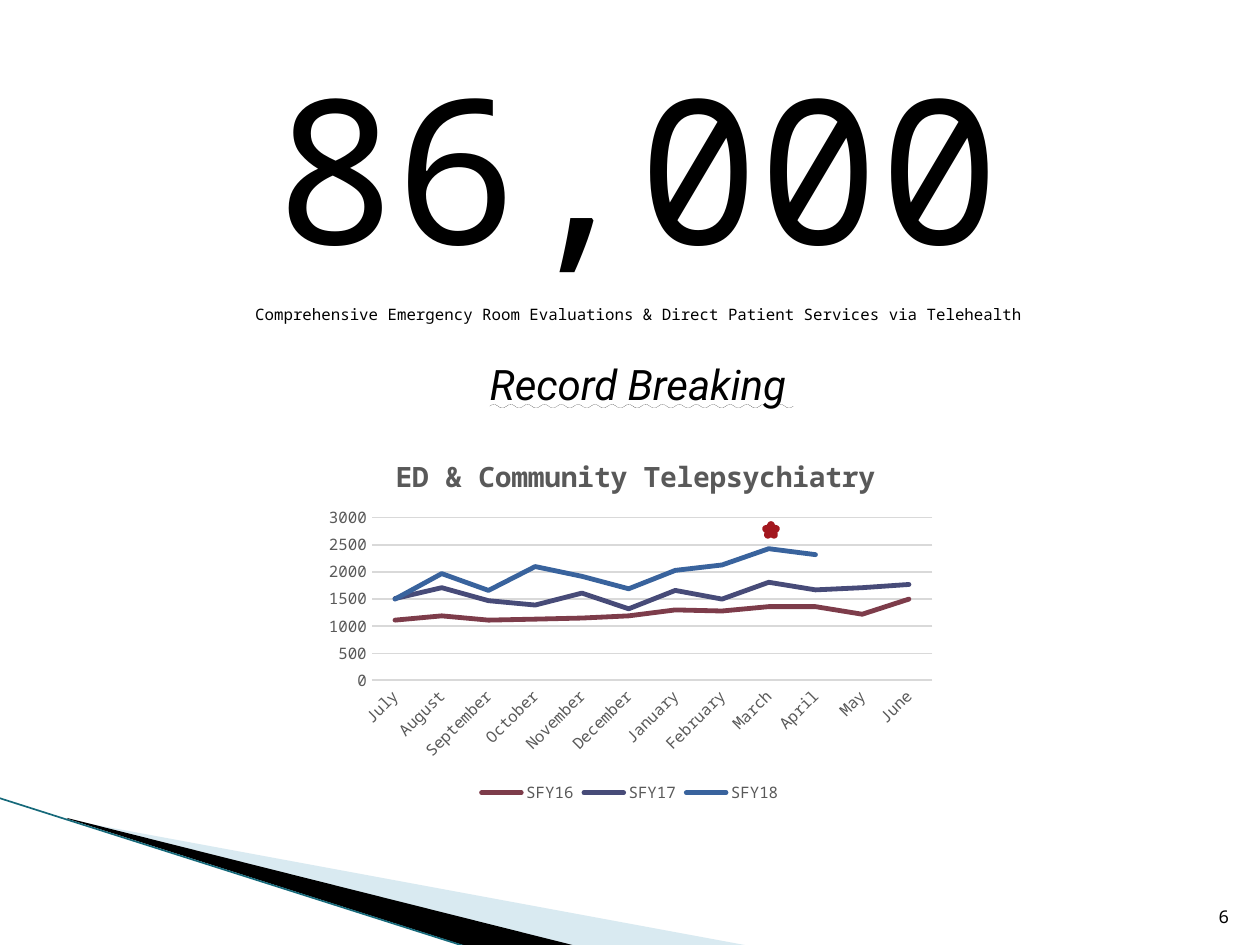
from dataclasses import dataclass

from lxml import etree
from pptx import Presentation
from pptx import util as u
from pptx.chart.data import CategoryChartData
from pptx.dml.color import RGBColor
from pptx.enum import chart as charts, shapes, text
from pptx.oxml import parse_xml
from pptx.oxml.ns import nsdecls, qn

SCALE = 914400 / 126  # EMU per px
MONO, SANS = "Noto Sans Mono", "Roboto"
COLORS = {
    "black": "000000", "pale": "A0CBDC", "teal": "16697A", "gray": "595959",
    "grid": "D9D9D9", "star": "EC767C", "star_line": "A3171E",
}
MONTHS = ["July", "August", "September", "October", "November", "December",
          "January", "February", "March", "April", "May", "June"]


@dataclass
class Wedge:
    points: list[tuple[int, int]]
    color: str
    alpha: int = 100


@dataclass
class Series:
    name: str
    color: str
    values: list[int | None]


WEDGES = [
    Wedge([(69, 820), (750, 946), (575, 946), (69, 819)], COLORS["pale"], 40),
    Wedge([(67, 818), (576, 946), (469, 947), (68, 819)], COLORS["black"]),
]
SERIES = [
    Series("SFY16", "7D3C4A", [1110, 1190, 1110, 1130, 1150, 1190,
                               1300, 1280, 1360, 1360, 1220, 1500]),
    Series("SFY17", "474B78", [1510, 1710, 1470, 1390, 1610, 1320,
                               1660, 1500, 1810, 1670, 1710, 1770]),
    Series("SFY18", "39639D", [1500, 1970, 1660, 2100, 1920, 1690,
                               2030, 2130, 2430, 2320, None, None]),
]


def px(value: int) -> int:
    return round(value * SCALE)


def rgb(color: str) -> RGBColor:
    return RGBColor.from_string(color)


def style_font(font, size: int, color: str, name: str = MONO, bold: bool = False) -> None:
    font.size, font.name, font.bold = u.Pt(size), name, bold
    font.color.rgb = rgb(color)


def style_line(line, color: str, width: float) -> None:
    line.color.rgb = rgb(color)
    line.width = u.Pt(width)


def add_box(slide, left: int, top: int, width: int, height: int, margins=(0, 0)):
    frame = slide.shapes.add_textbox(px(left), px(top), px(width), px(height)).text_frame
    frame.word_wrap = True
    frame.margin_left = frame.margin_right = px(margins[0])
    frame.margin_top = frame.margin_bottom = px(margins[1])
    return frame


def write(paragraph, content: str, *, size: int, name: str = MONO, italic: bool = False,
          underline=None, align=text.PP_ALIGN.CENTER, before: int = 0) -> None:
    paragraph.alignment = align
    if before:
        paragraph.space_before = u.Pt(before)
    run = paragraph.add_run()
    run.text = content
    style_font(run.font, size, COLORS["black"], name)
    run.font.italic, run.font.underline = italic, underline


def add_wedge(slide, wedge: Wedge) -> None:
    builder = slide.shapes.build_freeform(*wedge.points[0], scale=SCALE)
    builder.add_line_segments(wedge.points[1:], close=True)
    shape = builder.convert_to_shape()
    shape.shadow.inherit = False
    shape.fill.solid()
    shape.fill.fore_color.rgb = rgb(wedge.color)
    shape.line.fill.background()
    if wedge.alpha < 100:
        color = shape.fill._xPr.find(".//" + qn("a:srgbClr"))
        etree.SubElement(color, qn("a:alpha"), val=str(wedge.alpha * 1000))


def layout(x: float, y: float, size: tuple[float, float] | None = None):
    """Manual chart layout, as fractions of the chart frame."""
    parts = [("layoutTarget", "inner")] if size else []
    parts += [("xMode", "edge"), ("yMode", "edge"), ("x", x), ("y", y)]
    if size:
        parts += [("w", size[0]), ("h", size[1])]
    body = "".join(f'<c:{tag} val="{value}"/>' for tag, value in parts)
    return parse_xml(f'<c:layout {nsdecls("c")}><c:manualLayout>{body}'
                     '</c:manualLayout></c:layout>')


def add_line_chart(slide) -> None:
    data = CategoryChartData()
    data.categories = MONTHS
    for series in SERIES:
        data.add_series(series.name, series.values)
    chart = slide.shapes.add_chart(charts.XL_CHART_TYPE.LINE, px(315), px(431),
                                   px(630), px(378), data).chart
    style_font(chart.font, 10, COLORS["black"])

    # Title and plot area
    chart.has_title = True
    frame = chart.chart_title.text_frame
    frame.text = "ED & Community Telepsychiatry"
    style_font(frame.paragraphs[0].runs[0].font, 16, COLORS["gray"], bold=True)
    title = chart.chart_title._element
    plot_area = chart._chartSpace.chart.plotArea
    for parent in (title, plot_area):
        for old in parent.findall(qn("c:layout")):
            parent.remove(old)
    title.find(qn("c:tx")).addnext(layout(0.12, 0.05))
    plot_area.insert(0, layout(0.09, 0.23, (0.89, 0.43)))

    # Series
    chart.plots[0].vary_by_categories = False
    for line, series in zip(chart.plots[0].series, SERIES):
        line.smooth = False
        line.marker.style = charts.XL_MARKER_STYLE.NONE
        style_line(line.format.line, series.color, 2.75)
        line.format.line._ln.set("cap", "rnd")

    # Axes and legend
    months, values = chart.category_axis, chart.value_axis
    for axis in (months, values):
        axis.major_tick_mark = axis.minor_tick_mark = charts.XL_TICK_MARK.NONE
        style_font(axis.tick_labels.font, 9, COLORS["gray"])
    months._element.find(".//" + qn("a:bodyPr")).set("rot", "-2700000")
    style_line(months.format.line, COLORS["grid"], 1)
    values.minimum_scale, values.maximum_scale, values.major_unit = 0, 3000, 500
    values.format.line.fill.background()
    style_line(values.major_gridlines.format.line, COLORS["grid"], 0.75)
    chart.has_legend = True
    chart.legend.position = charts.XL_LEGEND_POSITION.BOTTOM
    chart.legend.include_in_layout = False
    style_font(chart.legend.font, 9, COLORS["gray"])


def main() -> None:
    presentation = Presentation()
    presentation.slide_width, presentation.slide_height = px(1260), px(945)
    slide = presentation.slides.add_slide(presentation.slide_layouts[6])

    # Corner decoration
    for wedge in WEDGES:
        add_wedge(slide, wedge)
    edge = slide.shapes.add_connector(shapes.MSO_CONNECTOR.STRAIGHT,
                                      px(-1), px(798), px(467), px(947))
    style_line(edge.line, COLORS["teal"], 0.95)
    etree.SubElement(edge._element.spPr, qn("a:effectLst"))

    # Headline figure and captions
    headline = add_box(slide, 71, 43, 1134, 260)
    write(headline.paragraphs[0], "86,000", size=115)
    captions = add_box(slide, 71, 305, 1134, 115)
    write(captions.paragraphs[0], "Comprehensive Emergency Room Evaluations & "
          "Direct Patient Services via Telehealth", size=9)
    write(captions.add_paragraph(), "Record Breaking", size=24, name=SANS, italic=True,
          underline=text.MSO_UNDERLINE.WAVY_LINE, before=20)

    # Slide number
    number = add_box(slide, 1192, 883, 50, 50, margins=(13, 6))
    number.vertical_anchor = text.MSO_ANCHOR.BOTTOM
    write(number.paragraphs[0], "6", size=10, align=text.PP_ALIGN.RIGHT)

    # Chart with a star over the record month
    add_line_chart(slide)
    star = slide.shapes.add_shape(shapes.MSO_SHAPE.STAR_5_POINT,
                                  px(766), px(525), px(10), px(10))
    star.shadow.inherit = False
    star.fill.solid()
    star.fill.fore_color.rgb = rgb(COLORS["star"])
    style_line(star.line, COLORS["star_line"], 4.33)
    etree.SubElement(star.line._ln, qn("a:round"))

    presentation.save("out.pptx")


if __name__ == "__main__":
    main()
